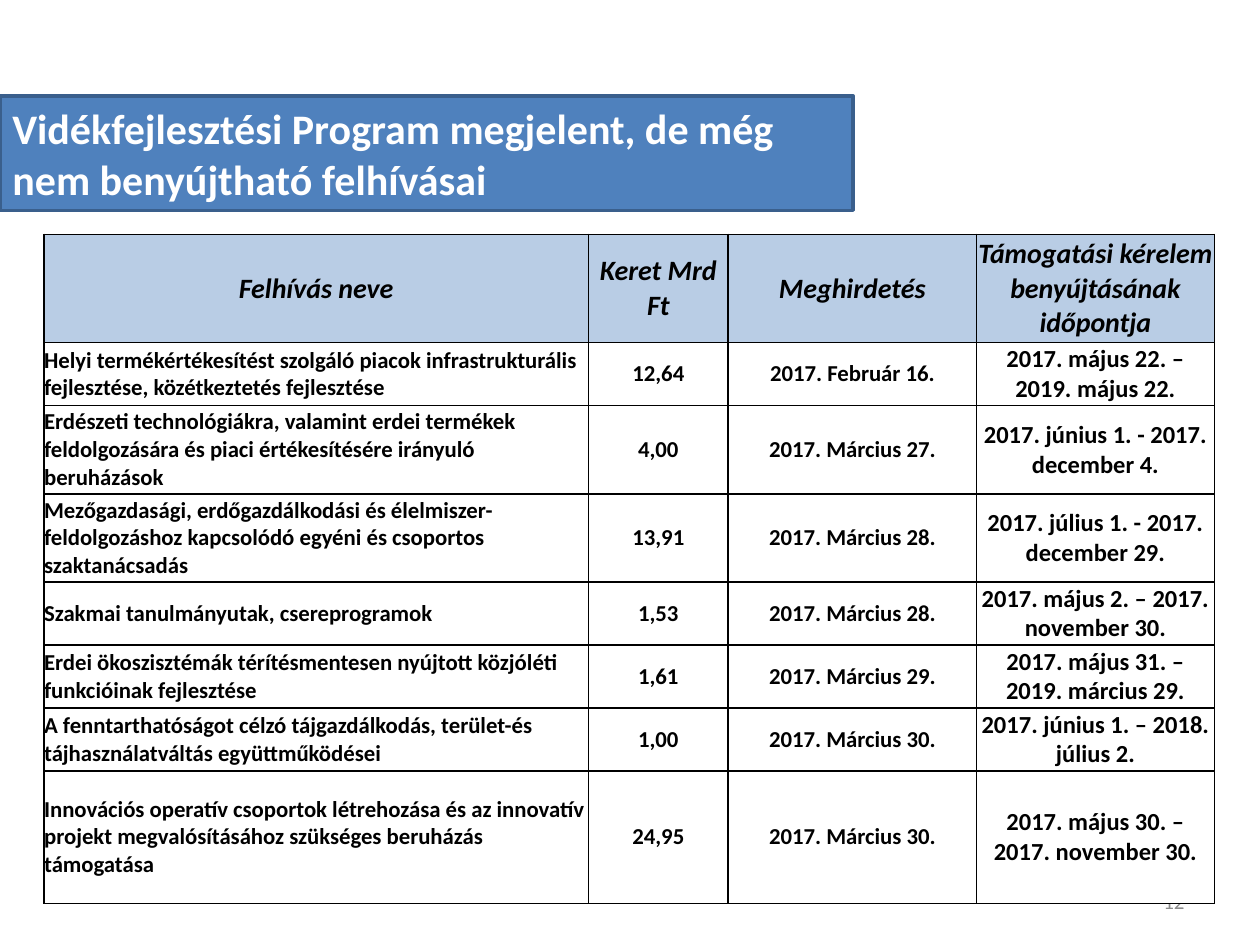
import lxml.etree
import pptx
import pptx.dml.color
import pptx.enum.shapes
import pptx.enum.text
import pptx.oxml.ns
import pptx.util

ALIGN = pptx.enum.text.PP_ALIGN
MIDDLE = pptx.enum.text.MSO_ANCHOR.MIDDLE

TITLE = "Vidékfejlesztési Program megjelent, de még nem benyújtható felhívásai"
HEADER = ["Felhívás neve", "Keret Mrd Ft", "Meghirdetés",
          "Támogatási kérelem benyújtásának időpontja"]
CALLS = [
    ["Helyi termékértékesítést szolgáló piacok infrastrukturális fejlesztése, "
     "közétkeztetés fejlesztése",
     "12,64", "2017. Február 16.", "2017. május 22. – 2019. május 22."],
    ["Erdészeti technológiákra, valamint erdei termékek feldolgozására és piaci "
     "értékesítésére irányuló beruházások",
     "4,00", "2017. Március 27.", "2017. június 1. - 2017. december 4."],
    ["Mezőgazdasági, erdőgazdálkodási és élelmiszer-feldolgozáshoz kapcsolódó "
     "egyéni és csoportos szaktanácsadás",
     "13,91", "2017. Március 28.", "2017. július 1. - 2017. december 29."],
    ["Szakmai tanulmányutak, csereprogramok",
     "1,53", "2017. Március 28.", "2017. május 2. – 2017. november 30."],
    ["Erdei ökoszisztémák térítésmentesen nyújtott közjóléti funkcióinak fejlesztése",
     "1,61", "2017. Március 29.", "2017. május 31. – 2019. március 29."],
    ["A fenntarthatóságot célzó tájgazdálkodás, terület-és tájhasználatváltás "
     "együttműködései",
     "1,00", "2017. Március 30.", "2017. június 1. – 2018. július 2."],
    ["Innovációs operatív csoportok létrehozása és az innovatív projekt "
     "megvalósításához szükséges beruházás támogatása",
     "24,95", "2017. Március 30.", "2017. május 30. – 2017. november 30."],
]
COLUMN_WIDTHS = [4.32, 1.11, 1.97, 1.89]
ROW_HEIGHTS = [0.86, 0.5, 0.7, 0.7, 0.5, 0.5, 0.5, 1.05]
BODY_SIZES = [13, 13, 13, 14]


def color(hex_string):
    return pptx.dml.color.RGBColor.from_string(hex_string)


class SlideBuilder:
    """Holds the style and the slide; the grid has one unit per inch."""

    font_name = "Calibri"
    unit = pptx.util.Inches(1)

    def __init__(self, presentation):
        self.slide = presentation.slides.add_slide(presentation.slide_layouts[6])

    def grid(self, *lengths):
        return [round(length * self.unit) for length in lengths]

    def set_text(self, text_frame, text, size, text_color, alignment=ALIGN.LEFT,
                 bold=False, italic=False):
        text_frame.text = text
        text_frame.word_wrap = True
        paragraph = text_frame.paragraphs[0]
        paragraph.alignment = alignment
        for run in paragraph.runs:
            run.font.name = self.font_name
            run.font.size = pptx.util.Pt(size)
            run.font.bold = bold
            run.font.italic = italic
            run.font.color.rgb = color(text_color)

    def text(self, place, text, size, text_color, alignment):
        shape = self.slide.shapes.add_textbox(*self.grid(*place))
        shape.text_frame.vertical_anchor = MIDDLE
        self.set_text(shape.text_frame, text, size, text_color, alignment)

    def banner(self, place, text, size, fill, line):
        shape = self.slide.shapes.add_shape(
            pptx.enum.shapes.MSO_SHAPE.RECTANGLE, *self.grid(*place))
        shape.shadow.inherit = False
        shape.fill.solid()
        shape.fill.fore_color.rgb = color(fill)
        shape.line.color.rgb = color(line)
        shape.line.width = pptx.util.Pt(2)
        shape.text_frame.vertical_anchor = MIDDLE
        self.set_text(shape.text_frame, text, size, "FFFFFF", bold=True)

    def border(self, cell, line_color, width):
        """Draw all four cell edges; they must precede the cell's fill."""
        properties = cell._tc.get_or_add_tcPr()
        for position, edge in enumerate(["a:lnL", "a:lnR", "a:lnT", "a:lnB"]):
            line = lxml.etree.Element(pptx.oxml.ns.qn(edge),
                                      w=str(pptx.util.Pt(width)))
            fill = lxml.etree.SubElement(line, pptx.oxml.ns.qn("a:solidFill"))
            lxml.etree.SubElement(fill, pptx.oxml.ns.qn("a:srgbClr"), val=line_color)
            properties.insert(position, line)

    def cell(self, cell, text, fill, **style):
        cell.margin_left = cell.margin_right = 0
        cell.margin_top = cell.margin_bottom = 0
        cell.vertical_anchor = MIDDLE
        cell.fill.solid()
        cell.fill.fore_color.rgb = color(fill)
        self.border(cell, "000000", 1)
        self.set_text(cell.text_frame, text, text_color="000000", bold=True, **style)

    def table(self, left, top, widths, heights, header, body):
        place = self.grid(left, top, sum(widths), sum(heights))
        table = self.slide.shapes.add_table(len(heights), len(widths), *place).table
        for column, width in zip(table.columns, self.grid(*widths)):
            column.width = width
        for row, height in zip(table.rows, self.grid(*heights)):
            row.height = height
        for column, text in enumerate(header):
            self.cell(table.cell(0, column), text, "B9CDE5", size=16,
                      alignment=ALIGN.CENTER, italic=True)
        for row, values in enumerate(body, start=1):
            for column, text in enumerate(values):
                self.cell(table.cell(row, column), text, "FFFFFF",
                          size=BODY_SIZES[column],
                          alignment=ALIGN.CENTER if column else ALIGN.LEFT)


def main():
    presentation = pptx.Presentation()
    presentation.slide_width = pptx.util.Inches(10)
    presentation.slide_height = pptx.util.Inches(7.5)
    builder = SlideBuilder(presentation)
    builder.text((7.17, 6.95, 2.33, 0.4), "12", 12, "8C8C8C", ALIGN.RIGHT)
    builder.table(0.35, 1.86, COLUMN_WIDTHS, ROW_HEIGHTS, HEADER, CALLS)
    builder.banner((0, 0.76, 6.77, 0.91), TITLE, 24, "4F81BD", "3A5F8C")
    presentation.save("out.pptx")


if __name__ == "__main__":
    main()
